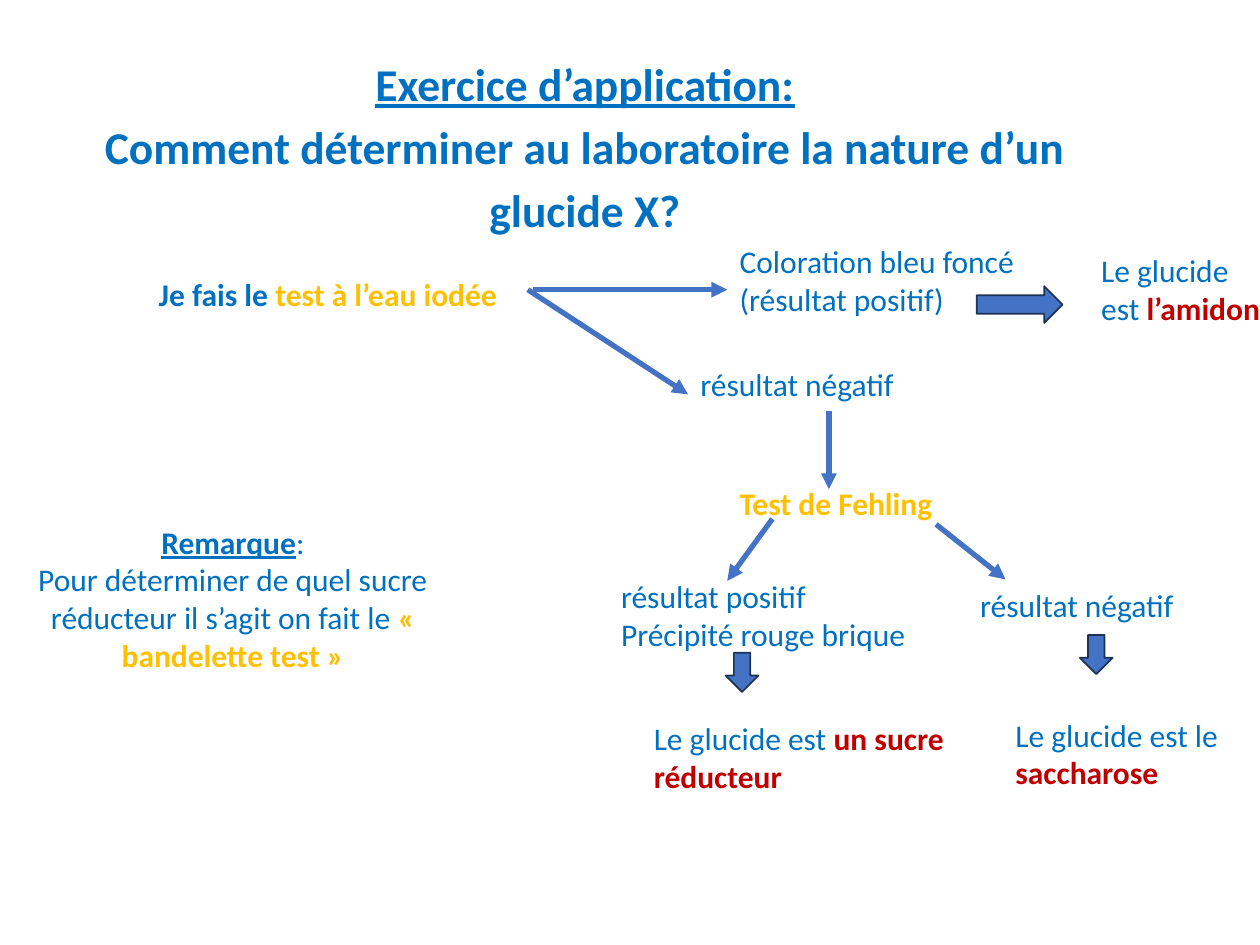
from lxml import etree
from pptx import Presentation
from pptx.dml.color import RGBColor
from pptx.enum import shapes, text
from pptx.oxml import ns
from pptx.util import Cm, Pt

BLUE, GOLD, RED = "0070C0", "FFC000", "C00000"
ARROW, EDGE = "4472C4", "1E3256"


def rgb(code):
    return RGBColor.from_string(code)


def write(tf, paragraphs, size=18, align=text.PP_ALIGN.LEFT, spacing=1.0):
    """Each paragraph is a list of runs: (words, colour, bold, underline)."""
    for i, runs in enumerate(paragraphs):
        p = tf.paragraphs[0] if i == 0 else tf.add_paragraph()
        p.alignment, p.line_spacing = align, spacing
        for words, colour, bold, underline in runs:
            r = p.add_run()
            r.text = words
            r.font.name, r.font.size = "Calibri", Pt(size)
            r.font.bold, r.font.underline = bold, underline
            r.font.color.rgb = rgb(colour)


prs = Presentation()
prs.slide_width, prs.slide_height = Cm(25.4), Cm(19.05)
s = prs.slides.add_slide(prs.slide_layouts[5])

# Title
title = s.shapes.title
title.left, title.top, title.width, title.height = Cm(0.58), Cm(0.84), Cm(22.43), Cm(3.99)
tf = title.text_frame
tf.auto_size, tf.vertical_anchor = text.MSO_AUTO_SIZE.NONE, text.MSO_ANCHOR.TOP
write(tf, [
    [("Exercice d’application:", BLUE, True, True)],
    [("Comment déterminer au laboratoire la nature d’un glucide X?", BLUE, True, False)],
], 26, text.PP_ALIGN.CENTER, 1.15)

# Tests, results and conclusions: left, top, width, height, wrap, align, spacing, paragraphs
left, center = text.PP_ALIGN.LEFT, text.PP_ALIGN.CENTER
negative = [[("résultat négatif", BLUE, False, False)]]
labels = [
    (2.95, 5.3, 7.42, 1.17, True, left, 1.15, [
        [("Je fais le ", BLUE, True, False), ("test à l’eau iodée", GOLD, True, False)]]),
    (14.66, 4.75, 6.71, 1.8, False, left, 1.0, [
        [("Coloration bleu foncé", BLUE, False, False)],
        [("(résultat positif)", BLUE, False, False)]]),
    (21.95, 4.93, 3.73, 1.8, False, left, 1.0, [
        [("Le glucide", BLUE, False, False)],
        [("est ", BLUE, False, False), ("l’amidon", RED, True, False)]]),
    (13.87, 7.24, 5.18, 1.02, False, left, 1.0, negative),
    (14.66, 9.63, 4.42, 1.02, False, left, 1.0, [
        [("Test de Fehling", GOLD, True, False)]]),
    (12.27, 11.51, 6.93, 1.8, False, left, 1.0, [
        [("résultat positif", BLUE, False, False)],
        [("Précipité rouge brique", BLUE, False, False)]]),
    (19.51, 11.68, 5.18, 1.02, False, left, 1.0, negative),
    (12.93, 14.38, 6.35, 1.8, True, left, 1.0, [
        [("Le glucide est ", BLUE, False, False), ("un sucre réducteur", RED, True, False)]]),
    (20.22, 14.3, 5.18, 1.8, True, left, 1.0, [
        [("Le glucide est le ", BLUE, False, False), ("saccharose", RED, True, False)]]),
    (0.43, 10.41, 8.53, 3.33, True, center, 1.0, [
        [("Remarque", BLUE, True, True), (":", BLUE, False, False)],
        [("Pour déterminer de quel sucre réducteur il s’agit on fait le ", BLUE, False, False),
         ("« bandelette test »", GOLD, True, False)]]),
]
for x, y, w, h, wrap, align, spacing, paragraphs in labels:
    tf = s.shapes.add_textbox(Cm(x), Cm(y), Cm(w), Cm(h)).text_frame
    tf.word_wrap, tf.auto_size = wrap, text.MSO_AUTO_SIZE.SHAPE_TO_FIT_TEXT
    write(tf, paragraphs, align=align, spacing=spacing)

# Thin arrows between the steps
for x1, y1, x2, y2 in [
    (10.74, 5.84, 14.66, 5.84),
    (10.64, 5.84, 13.87, 7.95),
    (16.71, 8.28, 16.71, 9.86),
    (15.57, 10.46, 14.66, 11.71),
    (18.87, 10.57, 20.27, 11.68),
]:
    line = s.shapes.add_connector(shapes.MSO_CONNECTOR.STRAIGHT, Cm(x1), Cm(y1), Cm(x2), Cm(y2))
    line.line.color.rgb, line.line.width = rgb(ARROW), Pt(3)
    etree.SubElement(line.line._get_or_add_ln(), ns.qn("a:tailEnd"), type="triangle")
    etree.SubElement(line._element.spPr, ns.qn("a:effectLst"))

# Block arrows to the conclusions
right, down = shapes.MSO_SHAPE.RIGHT_ARROW, shapes.MSO_SHAPE.DOWN_ARROW
for kind, x, y, w, h in [
    (right, 19.69, 5.77, 1.73, 0.74),
    (down, 14.63, 13.16, 0.66, 0.79),
    (down, 21.77, 12.8, 0.66, 0.79),
]:
    sp = s.shapes.add_shape(kind, Cm(x), Cm(y), Cm(w), Cm(h))
    sp.shadow.inherit = False
    sp.fill.solid()
    sp.fill.fore_color.rgb = rgb(ARROW)
    sp.line.color.rgb, sp.line.width = rgb(EDGE), Pt(1)

prs.save("out.pptx")
